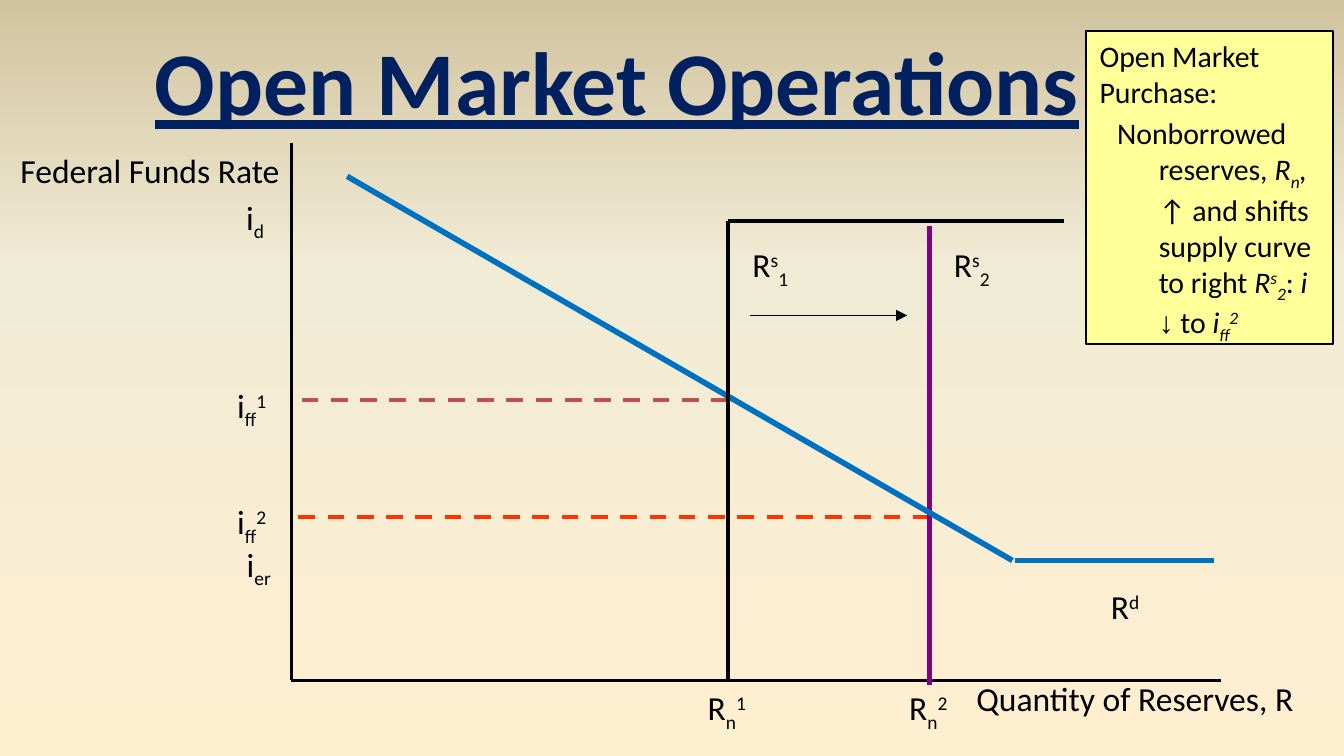
from dataclasses import dataclass

from lxml.etree import SubElement
from pptx import Presentation
from pptx.dml.color import RGBColor
from pptx.enum.dml import MSO_LINE
from pptx.enum.shapes import MSO_CONNECTOR, MSO_SHAPE
from pptx.enum.text import MSO_ANCHOR, MSO_AUTO_SIZE, PP_ALIGN
from pptx.oxml.ns import qn
from pptx.util import Inches, Pt

SLIDE_WIDTH = Inches(10)
SLIDE_HEIGHT = SLIDE_WIDTH * 9 // 16
CELL = SLIDE_WIDTH / 120
BLACK, NAVY, BLUE, PURPLE = "000000", "002060", "0070C0", "800080"
BRICK, ORANGE, YELLOW = "C0504D", "FF3300", "FFFF99"
BACKGROUND = ((0, "FFEFD1"), (65, "F0EBD5"), (100, "D1C39F"))
BASELINES = {"_": -25000, "^": 30000}
LABEL_HEIGHT = 4.85


@dataclass
class Box:
    """A rectangle measured in grid cells."""
    left: float
    top: float
    width: float
    height: float

    def inside(self, column, row, width, height=LABEL_HEIGHT):
        """Return a box offset from this one's top left corner."""
        return Box(self.left + column, self.top + row, width, height)

    def lengths(self):
        """Return left, top, width and height in slide units."""
        return [cells(n) for n in (self.left, self.top, self.width, self.height)]


def cells(count):
    """Convert grid cells to slide units."""
    return round(count * CELL)


def color(value):
    """Turn a hex string into a colour."""
    return RGBColor.from_string(value)


def paint_background(page):
    """Fill the page with a three-stop vertical gradient."""
    fill = page.background.fill
    fill.gradient()
    fill.gradient_angle = 90
    gradient = page.background._cSld.bg.bgPr.find(qn("a:gradFill"))
    stops = gradient.find(qn("a:gsLst"))
    for stop in list(stops):
        stops.remove(stop)
    for position, value in BACKGROUND:
        stop = SubElement(stops, qn("a:gs"), pos=str(position * 1000))
        SubElement(stop, qn("a:srgbClr"), val=value)
    gradient.find(qn("a:lin")).set("ang", "16200000")


def write_spans(para, spans, size, ink=BLACK):
    """Add (text, style) runs: _ lowers, ^ raises, i slants, a uses Arial."""
    for text, style in spans:
        span = para.add_run()
        span.text = text
        span.font.size = Pt(size)
        span.font.name = "Arial" if "a" in style else "Calibri"
        span.font.color.rgb = color(ink)
        if "i" in style:
            span.font.italic = True
        for mark, shift in BASELINES.items():
            if mark in style:
                span.font._element.set("baseline", str(shift))


def add_label(page, box, spans, size=18, ink=BLACK, wrap=False, align=PP_ALIGN.LEFT):
    """Place one line of text in a box and return its paragraph."""
    frame = page.shapes.add_textbox(*box.lengths()).text_frame
    frame.word_wrap = wrap
    frame.auto_size = MSO_AUTO_SIZE.SHAPE_TO_FIT_TEXT
    para = frame.paragraphs[0]
    para.alignment = align
    write_spans(para, spans, size, ink)
    return para


def add_line(page, box, start, end, ink, weight, dashed=False, arrow=False):
    """Draw a straight line between two points given relative to a box."""
    ends = [cells(n) for x, y in (start, end) for n in (box.left + x, box.top + y)]
    connector = page.shapes.add_connector(MSO_CONNECTOR.STRAIGHT, *ends)
    connector.line.color.rgb = color(ink)
    connector.line.width = Pt(weight)
    if dashed:
        connector.line.dash_style = MSO_LINE.DASH
    if arrow:
        SubElement(connector.line._get_or_add_ln(), qn("a:tailEnd"), type="triangle")
    SubElement(connector._element.spPr, qn("a:effectLst"))


def draw_title(page, box):
    """Write the underlined heading."""
    para = add_label(page, box, [("Open Market Operations", "")], 48, NAVY,
                     align=PP_ALIGN.CENTER)
    para.runs[0].font.bold = True
    para.runs[0].font.underline = True


def draw_diagram(page, box):
    """Draw the reserves market inside the box formed by its two axes."""
    ceiling, floor, kink = 7, 37.3, 64.4
    corner = (0, box.height)
    add_line(page, box, (0, 0), corner, BLACK, 1.5)
    add_line(page, box, corner, (box.width, box.height), BLACK, 1.5)

    equilibria = (("1", 39, 23, BRICK), ("2", 57, 33.42, ORANGE))
    for number, supply, rate, ink in equilibria:
        add_line(page, box, (supply, rate), (0, rate), ink, 2.25, dashed=True)
        add_label(page, box.inside(-6, rate - 2, 5.3),
                  [("i", ""), ("ff", "_"), (number, "^")])
        add_label(page, box.inside(supply - 3, box.height, 6.8),
                  [("R", ""), ("n", "_"), (number, "^")])
        add_label(page, box.inside(supply + 1, 8.45, 6.7),
                  [("R", ""), ("s", "^"), (number, "_")])

    first, second = (supply for _, supply, _, _ in equilibria)
    add_line(page, box, (second, ceiling + 0.4), (second, box.height + 0.4), PURPLE, 2.25)
    add_line(page, box, (first + 2, 15.42), (second - 2, 15.42), BLACK, 0.75, arrow=True)
    add_line(page, box, (5, 3), (kink, floor), BLUE, 3)
    add_line(page, box, (first, box.height), (first, ceiling), BLACK, 2.25)
    add_line(page, box, (first, ceiling), (first + 30, ceiling), BLACK, 2.25)
    add_line(page, box, (kink + 0.2, floor), (kink + 18, floor), BLUE, 3)

    add_label(page, box.inside(72, 39, 5.6), [("R", ""), ("d", "^")])
    add_label(page, box.inside(-5.2, 4.2, 4.2), [("i", ""), ("d", "_")])
    add_label(page, box.inside(-5.15, 35.2, 6.4), [("i", ""), ("er", "_")], wrap=True)
    add_label(page, box.inside(-26, 0.05, 26.8), [("Federal Funds Rate", "")],
              wrap=True, align=PP_ALIGN.CENTER)
    add_label(page, box.inside(60, 47.2, 31), [("Quantity of Reserves, R", "")], wrap=True)


def draw_note(page, box):
    """Draw the bordered explanation with a hanging second paragraph."""
    note = page.shapes.add_shape(MSO_SHAPE.RECTANGLE, *box.lengths())
    note.shadow.inherit = False
    note.fill.solid()
    note.fill.fore_color.rgb = color(YELLOW)
    note.line.color.rgb = color(BLACK)
    note.line.width = Pt(1)
    frame = note.text_frame
    frame.word_wrap = True
    frame.vertical_anchor = MSO_ANCHOR.TOP
    heading, detail = frame.paragraphs[0], frame.add_paragraph()
    for para in (heading, detail):
        para.alignment = PP_ALIGN.LEFT
        para.space_before = Pt(3.2)
    detail.level = 1
    properties = detail._p.get_or_add_pPr()
    properties.set("marL", str(Inches(0.44)))
    properties.set("indent", str(Inches(-0.31)))
    write_spans(heading, [("Open Market Purchase:", "")], 16)
    write_spans(detail, [
        ("Nonborrowed reserves, ", ""), ("R", "i"), ("n", "i_"), (", ", "i"),
        ("↑ and shifts supply curve to right ", ""),
        ("R", "i"), ("s", "i^"), ("2", "i_"), (": ", ""), ("i ", "i"),
        ("↓", "a"), (" to ", ""), ("i", "i"), ("ff", "i_"), ("2", "i^"),
    ], 16)


def main():
    """Build and save the deck."""
    deck = Presentation()
    deck.slide_width, deck.slide_height = SLIDE_WIDTH, SLIDE_HEIGHT
    page = deck.slides.add_slide(deck.slide_layouts[6])
    paint_background(page)
    draw_diagram(page, Box(26, 12.75, 83, 48))
    draw_note(page, Box(97, 2.75, 22, 28))
    draw_title(page, Box(12.2, 1.75, 85.8, 10.9))
    deck.save("out.pptx")


if __name__ == "__main__":
    main()
